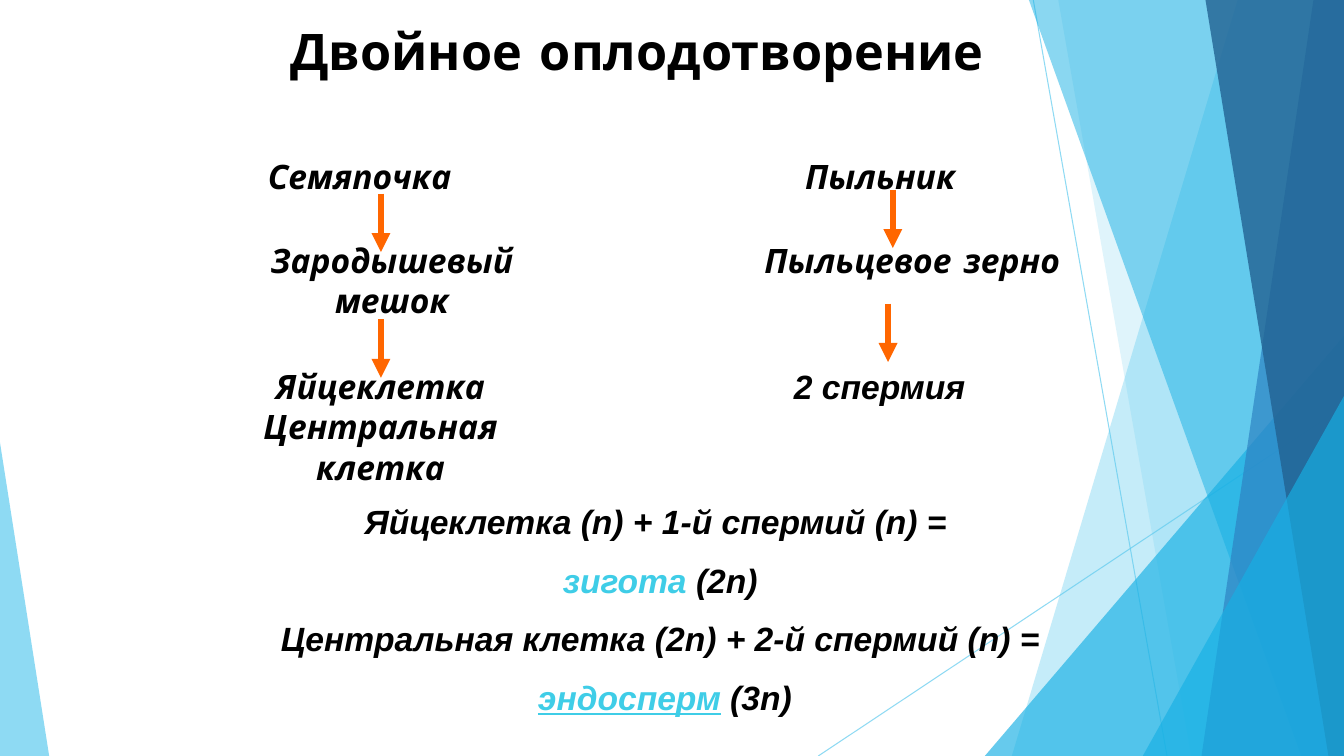
from lxml.etree import SubElement
from pptx import Presentation
from pptx.dml.color import RGBColor
from pptx.enum.shapes import MSO_CONNECTOR, MSO_SHAPE
from pptx.enum.text import PP_ALIGN
from pptx.oxml.ns import qn
from pptx.util import Cm, Pt

COLORS = {
    "black": "000000", "sky": "5FCBEF", "azure": "17B0E4", "blue": "2E83C3",
    "navy": "226292", "orange": "FF6600", "accent": "3FCDE7",
}
WIDTH, HEIGHT = 33.87, 19.05
COMIC, ARIAL = "Comic Neue", "Arial"
LEFT, CENTER = PP_ALIGN.LEFT, PP_ALIGN.CENTER

presentation = Presentation()
presentation.slide_width, presentation.slide_height = Cm(WIDTH), Cm(HEIGHT)
slide = presentation.slides.add_slide(presentation.slide_layouts[6])
shapes = slide.shapes


def set_opacity(shape, percent):
    """Make the shape's only explicit colour partly transparent."""
    color = shape._element.xpath(".//a:srgbClr")[0]
    SubElement(color, qn("a:alpha"), val=str(percent * 1000))


def add_line(start, end, color, width):
    line = shapes.add_connector(MSO_CONNECTOR.STRAIGHT, *map(Cm, start + end))
    line.line.color.rgb = RGBColor.from_string(COLORS[color])
    line.line.width = Pt(width)
    SubElement(line._element.spPr, qn("a:effectLst"))
    return line


# Decoration: thin lines, then facets along the right edge and corner triangles
for start, end in [((26.04, 0), (29.41, HEIGHT)), ((WIDTH, 10.24), (20.62, HEIGHT))]:
    set_opacity(add_line(start, end, "sky", 0.75), 70)

# A facet is (top x, bottom x); a triangle is (left, top, width, apex position)
decorations = [
    ((31.19, 25.5), "sky", 36),
    ((26.67, 30.02), "sky", 20),
    ((24.82, 8.46, 9.05, 1), "azure", 66),
    ((25.93, 32.79), "azure", 50),
    ((33.1, 30.28), "blue", 70),
    ((30.38, 33.48), "navy", 80),
    ((28.8, 9.98, 5.07, 1), "azure", 66),
    ((0, 11.15, 1.24, 0), "sky", 70),
]
for geometry, color, opacity in decorations:
    if len(geometry) == 2:
        top_x, bottom_x = geometry
        builder = shapes.build_freeform(Cm(top_x), 0)
        corners = [(WIDTH, 0), (WIDTH, HEIGHT), (bottom_x, HEIGHT)]
        builder.add_line_segments([(Cm(x), Cm(y)) for x, y in corners])
        shape = builder.convert_to_shape()
    else:
        left, top, width, apex = geometry
        shape = shapes.add_shape(MSO_SHAPE.ISOSCELES_TRIANGLE, Cm(left), Cm(top),
                                 Cm(width), Cm(HEIGHT - top))
        shape.adjustments[0] = apex
    shape.shadow.inherit = False
    shape.fill.solid()
    shape.fill.fore_color.rgb = RGBColor.from_string(COLORS[color])
    shape.line.fill.background()
    set_opacity(shape, opacity)

# Text: box, alignment, font, size, italic, paragraphs of (text, colour, underline)
texts = [
    ((7.06, 0.38, 18.03, 2.51), LEFT, COMIC, 36, False,
     [[("Двойное оплодотворение", "black", False)]]),
    ((5.64, 9.1, 7.9, 5.6), CENTER, COMIC, 24, True,
     [[("Яйцеклетка ", "black", False), ("Центральная клетка", "black", False)]]),
    ((6.5, 3.81, 8.18, 1.27), LEFT, COMIC, 24, True,
     [[("Семяпочка", "black", False)]]),
    ((20.04, 3.81, 6.2, 1.27), LEFT, COMIC, 24, True,
     [[("Пыльник", "black", False)]]),
    ((18.62, 5.92, 8.74, 1.27), CENTER, COMIC, 24, True,
     [[("Пыльцевое зерно", "black", False)]]),
    ((19.76, 9.1, 6.78, 1.27), LEFT, ARIAL, 24, True,
     [[("2 спермия", "black", False)]]),
    ((5.36, 5.92, 9.04, 2.29), CENTER, COMIC, 24, True,
     [[("Зародышевый мешок", "black", False)]]),
    ((0.84, 12.5, 31.6, 5.84), CENTER, ARIAL, 24, True,
     [[("Яйцеклетка (n) + 1-й спермий (n) = ", "black", False)],
      [("зигота ", "accent", False), ("(2n)", "black", False)],
      [("Центральная клетка (2n) + 2-й спермий (n) =", "black", False)],
      [(" ", "black", False), ("эндосперм", "accent", True), (" (3n)", "black", False)]]),
]
for box, alignment, font_name, size, italic, paragraphs in texts:
    frame = shapes.add_textbox(*map(Cm, box)).text_frame
    frame.word_wrap = True
    for index, runs in enumerate(paragraphs):
        paragraph = frame.add_paragraph() if index else frame.paragraphs[0]
        paragraph.alignment = alignment
        if index:
            paragraph.space_before = Pt(13)
        for text, color, underline in runs:
            run = paragraph.add_run()
            run.text = text
            font = run.font
            font.name, font.size = font_name, Pt(size)
            font.bold, font.italic, font.underline = True, italic, underline
            font.color.rgb = RGBColor.from_string(COLORS[color])

# Arrows between the stages
ARROW_LENGTH = 1.47
for x, y in [(9.6, 4.88), (9.6, 8.05), (22.38, 7.65), (22.5, 4.78)]:
    arrow = add_line((x, y), (x, y + ARROW_LENGTH), "orange", 4.5)
    SubElement(arrow.line._get_or_add_ln(), qn("a:tailEnd"), type="triangle")

presentation.save("out.pptx")
